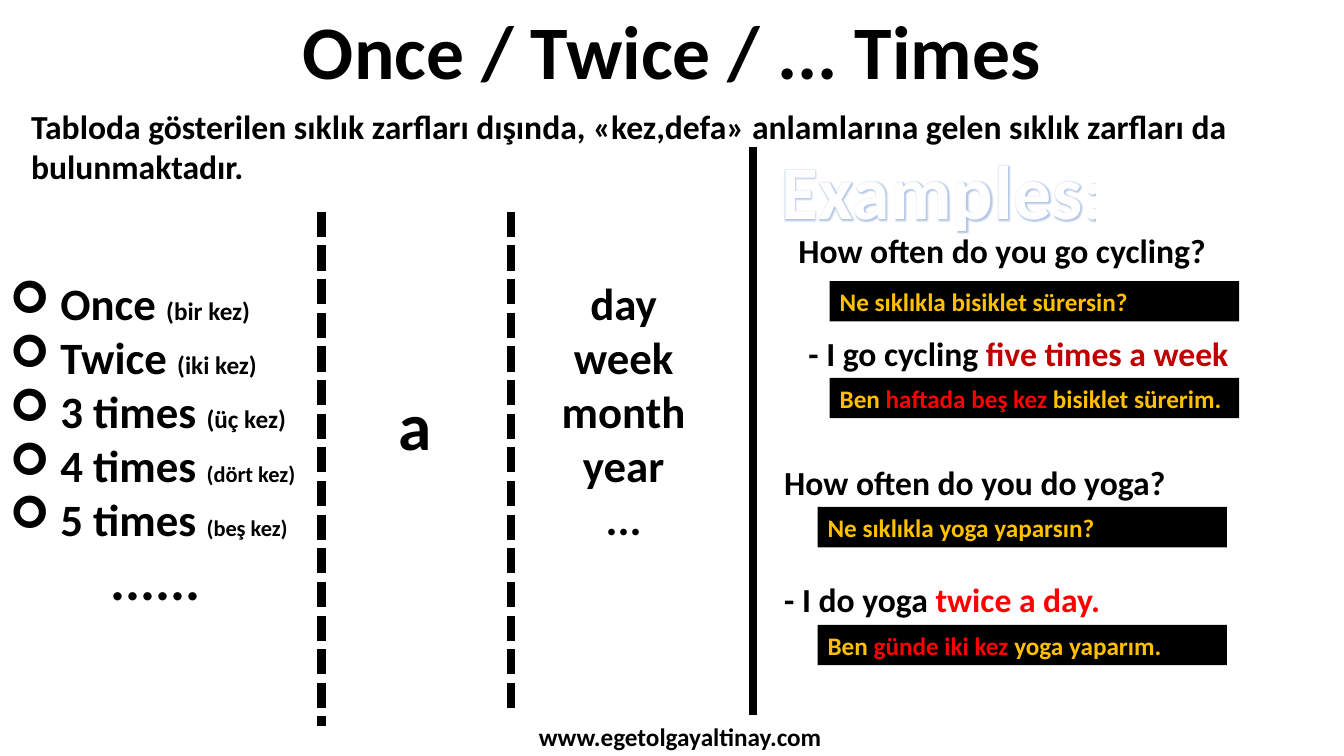
from dataclasses import dataclass
from typing import Optional

from lxml import etree
from pptx import Presentation
from pptx.dml.color import RGBColor
from pptx.enum.dml import MSO_LINE
from pptx.enum.shapes import MSO_CONNECTOR, MSO_SHAPE
from pptx.enum.text import MSO_ANCHOR, MSO_AUTO_SIZE, PP_ALIGN
from pptx.oxml import parse_xml
from pptx.oxml.ns import nsdecls, qn
from pptx.util import Inches, Pt

STRAIGHT = MSO_CONNECTOR.STRAIGHT
RECTANGLE = MSO_SHAPE.RECTANGLE
DASH = MSO_LINE.SQUARE_DOT
MIDDLE = MSO_ANCHOR.MIDDLE
FIT_SHAPE = MSO_AUTO_SIZE.SHAPE_TO_FIT_TEXT
LEFT, CENTER = PP_ALIGN.LEFT, PP_ALIGN.CENTER

BLACK = RGBColor(0x00, 0x00, 0x00)
NEAR_WHITE = RGBColor(0xFE, 0xFE, 0xFE)
ORANGE = RGBColor(0xED, 0x7D, 0x31)
BLUE = RGBColor(0x44, 0x72, 0xC4)
GOLD = RGBColor(0xFF, 0xC0, 0x00)
RED = RGBColor(0xFF, 0x00, 0x00)
DARK_RED = RGBColor(0xC0, 0x00, 0x00)
FONT = "Calibri"


@dataclass
class Piece:
    text: str
    size: Optional[float] = None
    color: Optional[RGBColor] = None


@dataclass
class Line:
    pieces: list[Piece]
    size: float
    bullet: bool = False
    indent: float = 0


@dataclass
class Block:
    left: float
    top: float
    width: float
    height: float
    lines: list[Line]
    align: PP_ALIGN = LEFT
    color: RGBColor = BLACK
    wrap: bool = True
    boxed: bool = False
    outline: Optional[RGBColor] = None
    outline_width: float = 0
    spacing: int = 0
    glow: bool = False


@dataclass
class Divider:
    x: float
    top: float
    bottom: float
    dashed: bool = False


def plain(text: str, size: float) -> list[Line]:
    return [Line([Piece(text)], size)]


def frequency(text: str, meaning: str, meaning_size: float) -> Line:
    return Line([Piece(f"{text} "), Piece(f"({meaning})", meaning_size)], 32, bullet=True)


def sentence(top: float, left: float, *pieces: Piece) -> Block:
    return Block(left, top, 5.3, 0.5, [Line(list(pieces), 24)])


def translation(top: float, left: float, *pieces: Piece) -> Block:
    return Block(left, top, 4.06, 0.4, [Line(list(pieces), 18)], color=GOLD, boxed=True)


def decorate(run, block: Block) -> None:
    """Add the outline and glow of display lettering."""
    properties = run.font._element if hasattr(run.font, "_element") else run._r.get_or_add_rPr()
    properties.insert(0, parse_xml(
        f'<a:ln {nsdecls("a")} w="{Pt(block.outline_width)}"><a:solidFill>'
        f'<a:srgbClr val="{block.outline}"/></a:solidFill></a:ln>'))
    if block.spacing:
        properties.set("spc", str(block.spacing))
    if block.glow:
        run.font.fill.solid()
        run.font.fill.fore_color.rgb = block.color
        properties.append(parse_xml(
            f'<a:effectLst {nsdecls("a")}><a:glow rad="38100"><a:srgbClr val="{block.outline}">'
            '<a:alpha val="40000"/></a:srgbClr></a:glow></a:effectLst>'))


def add_line(paragraph, line: Line, block: Block) -> None:
    paragraph.alignment = block.align
    properties = paragraph._p.get_or_add_pPr()
    if line.bullet:
        properties.set("marL", str(Inches(0.5)))
        properties.set("indent", str(-Inches(0.5)))
        etree.SubElement(properties, qn("a:buFont"), typeface="Wingdings")
        etree.SubElement(properties, qn("a:buChar"), char="➢")
    elif line.indent:
        properties.set("marL", str(Inches(line.indent)))
    font = paragraph.font
    font.name, font.size, font.bold = FONT, Pt(line.size), True
    font.color.rgb = block.color
    for piece in line.pieces:
        run = paragraph.add_run()
        run.text = piece.text
        if piece.size:
            run.font.size = Pt(piece.size)
        if piece.color is not None:
            run.font.color.rgb = piece.color
        if block.outline is not None:
            decorate(run, block)


def add_block(slide, block: Block) -> None:
    bounds = [Inches(n) for n in (block.left, block.top, block.width, block.height)]
    if block.boxed:
        shape = slide.shapes.add_shape(RECTANGLE, *bounds)
        shape.shadow.inherit = False
        shape.fill.solid()
        shape.fill.fore_color.rgb = BLACK
        shape.line.fill.background()
    else:
        shape = slide.shapes.add_textbox(*bounds)
    frame = shape.text_frame
    frame.word_wrap = block.wrap
    frame.auto_size = FIT_SHAPE
    if block.boxed:
        frame.vertical_anchor = MIDDLE
    for index, line in enumerate(block.lines):
        paragraph = frame.add_paragraph() if index else frame.paragraphs[0]
        add_line(paragraph, line, block)


def add_divider(slide, divider: Divider) -> None:
    x = Inches(divider.x)
    connector = slide.shapes.add_connector(
        STRAIGHT, x, Inches(divider.top), x, Inches(divider.bottom))
    connector.line.color.rgb = BLACK
    connector.line.width = Pt(6)
    if divider.dashed:
        connector.line.dash_style = DASH
    etree.SubElement(connector._element.spPr, qn("a:effectLst"))


HEADINGS = [
    Block(2.87, -0.01, 7.59, 1.01, plain("Once / Twice / ... Times", 54), CENTER,
          wrap=False, outline=ORANGE, outline_width=0.52),
    Block(0.21, 1, 12.91, 0.91, plain(
        "Tabloda gösterilen sıklık zarfları dışında, «kez,defa» anlamlarına gelen "
        "sıklık zarfları da bulunmaktadır.", 24)),
]
DIVIDERS = [
    Divider(3.19, 2.1, 7.2, dashed=True),
    Divider(5.07, 2.1, 7.09, dashed=True),
    Divider(7.47, 1.46, 7.09),
]
PATTERN = [
    Block(0, 2.69, 3.19, 4.58, [
        frequency("Once", "bir kez", 18),
        frequency("Twice", "iki kez", 18),
        frequency("3 times", "üç kez", 18),
        frequency("4 times", "dört kez", 16),
        frequency("5 times", "beş kez", 16),
        Line([Piece("......")], 40, indent=1),
    ]),
    Block(2.87, 3.75, 2.49, 0.91, plain("a", 48), CENTER),
    Block(4.59, 2.69, 3.19, 3.33,
          [Line([Piece(period)], 32) for period in ("day", "week", "month", "year", "...")],
          CENTER),
]
EXAMPLES = [
    Block(7.63, 1.38, 3.44, 1.01, plain("Examples:", 54), CENTER, NEAR_WHITE, wrap=False,
          outline=BLUE, outline_width=0.75, spacing=50, glow=True),
    sentence(2.23, 7.82, Piece("How often do you go cycling?")),
    sentence(3.25, 7.92, Piece("- I go cycling "), Piece("five times a week", color=DARK_RED)),
    translation(2.79, 8.23, Piece("Ne sıklıkla bisiklet sürersin?")),
    translation(3.75, 8.23, Piece("Ben "), Piece("haftada beş kez ", color=RED),
                Piece("bisiklet sürerim.")),
    sentence(4.53, 7.68, Piece("How often do you do yoga?")),
    translation(5.03, 8.11, Piece("Ne sıklıkla yoga yaparsın?")),
    sentence(5.69, 7.68, Piece("- I do yoga "), Piece("twice a day.", color=RED)),
    translation(6.2, 8.11, Piece("Ben "), Piece("günde iki kez ", color=RED),
                Piece("yoga yaparım.")),
]
FOOTER = Block(4.59, 7.11, 4.31, 0.4, plain("www.egetolgayaltinay.com", 18), CENTER)


def main() -> None:
    presentation = Presentation()
    presentation.slide_width, presentation.slide_height = Inches(13.33), Inches(7.5)
    slide = presentation.slides.add_slide(presentation.slide_layouts[6])
    for divider in DIVIDERS:
        add_divider(slide, divider)
    for block in [*HEADINGS, *PATTERN, *EXAMPLES, FOOTER]:
        add_block(slide, block)
    presentation.save("out.pptx")


if __name__ == "__main__":
    main()
